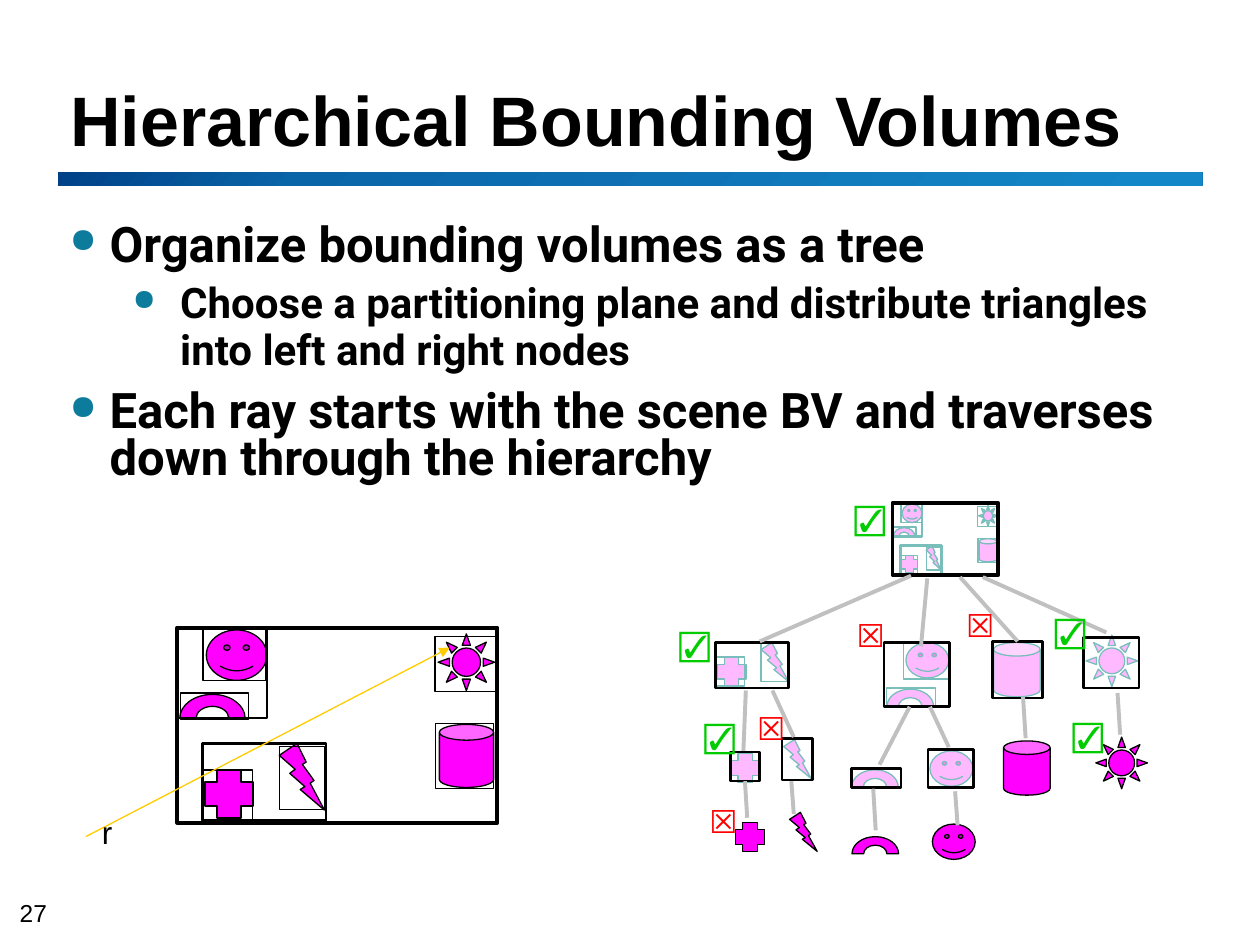
from dataclasses import dataclass
from typing import NamedTuple, Optional

from lxml import etree
from pptx import Presentation
from pptx.dml.color import RGBColor
from pptx.enum import shapes, text
from pptx.oxml import parse_xml
from pptx.oxml.ns import nsdecls, qn
from pptx.util import Pt


@dataclass(frozen=True)
class Theme:
    black: str = "000000"
    magenta: str = "FF00FF"
    teal: str = "7ABEBC"
    branch: str = "C0C0C0"
    ray: str = "FFCC00"
    bullet: str = "0C7B9C"
    hit: str = "00CC00"
    miss: str = "FF0000"
    bar: tuple = ((0, "004187"), (21, "0A64A8"), (96, "1487C8"))
    heading_font: str = "Arial"
    body_font: str = "Roboto"
    title: float = 40
    body: tuple = (28, 24)
    label: float = 18
    number: float = 14
    thin: float = 0.75
    medium: float = 1.5
    thick: float = 2.25


THEME = Theme()


class Area(NamedTuple):
    left: float
    top: float
    width: float
    height: float


class Style(NamedTuple):
    line: str
    opacity: int


class Symbol(NamedTuple):
    kind: str
    area: Area


class Box(NamedTuple):
    area: Area
    weight: float


class Branch(NamedTuple):
    start: tuple
    end: tuple
    start_box: Optional[str] = None  # joined at the bottom
    end_box: Optional[str] = None    # joined at the top


SOLID, FADED = Style(THEME.black, 100), Style(THEME.teal, 27)
PRESETS = {"smiley": shapes.MSO_SHAPE.SMILEY_FACE, "bolt": shapes.MSO_SHAPE.LIGHTNING_BOLT,
           "plus": shapes.MSO_SHAPE.CROSS, "sun": shapes.MSO_SHAPE.SUN,
           "can": shapes.MSO_SHAPE.CAN}

# Scene contents, measured from the corner of its frame
SCENE = Area(101.3, 358.6, 182.9, 111.6)
SCENE_SYMBOLS = [
    Symbol("smiley", Area(16.6, 1.4, 34.6, 28.8)), Symbol("bolt", Area(58.3, 66.2, 25.9, 38.2)),
    Symbol("arch", Area(1.4, 38.2, 37.4, 13.7)), Symbol("plus", Area(15.8, 81.4, 27.4, 27.4)),
    Symbol("sun", Area(149, 3.6, 32.4, 32.4)), Symbol("can", Area(149.8, 55.4, 31, 36))]
SCENE_BOXES = [
    Box(Area(14.4, 66.2, 70.6, 43.9), THEME.medium), Box(Area(-0.4, 0.7, 51.8, 51.1), THEME.medium),
    Box(Area(147.2, 5, 35.3, 31.7), THEME.thin), Box(Area(147.6, 54.7, 33.1, 37.4), THEME.thin),
    Box(Area(15.1, 81.4, 28.1, 28.8), THEME.thin), Box(Area(58.3, 68.1, 25.9, 36), THEME.thin),
    Box(Area(1.7, 37.4, 38.9, 15.1), THEME.thin), Box(Area(14.8, 0.7, 36, 29.5), THEME.thin)]

# Tree contents
ROOT = Area(510, 287.5, 60.5, 41)
TREE_SIZES = {"smiley": (24.5, 20.2), "bolt": (15.8, 22.3), "arch": (26.6, 9.8),
              "plus": (16.6, 16.6), "sun": (29.5, 29.5), "can": (26.6, 31)}
NODE_SYMBOLS = [("sun", 620.6, 362.9), ("can", 567.8, 367.2), ("bolt", 434.9, 367.2),
                ("plus", 409.7, 375.5), ("smiley", 517.7, 367.2), ("arch", 506.9, 393.8),
                ("arch", 486.7, 439.9), ("smiley", 531.4, 429.1), ("bolt", 447.8, 422.6),
                ("plus", 417.6, 430.6)]
LEAVES = [("can", 573.5, 423.4), ("sun", 626.2, 421.2), ("smiley", 532.8, 470.9),
          ("arch", 486.9, 478.1), ("plus", 420.3, 470), ("bolt", 451.2, 464.2)]
INNER_BOXES = [Area(409, 375.5, 16.6, 16.6), Area(434.9, 367.9, 15.1, 21.6),
               Area(506.6, 393.1, 28.1, 10.8), Area(516.2, 366.5, 25.9, 21.6)]
NODE_BOXES = {
    "sun": Area(619.2, 364.3, 31.7, 28.8), "can": Area(567.1, 366.5, 28.8, 32.4),
    "plus and bolt": Area(408.8, 367.2, 41.8, 25.9), "smiley and arch": Area(505.2, 367.2, 37.4, 36.7),
    "arch": Area(486.7, 439.2, 28.1, 10.8), "smiley": Area(530.4, 428.4, 25.9, 21.6),
    "bolt": Area(446.9, 421.9, 17.3, 23.8), "plus": Area(417.4, 429.8, 16.6, 16.6)}
BRANCHES = [
    Branch((520.6, 329), (434.2, 366.5)), Branch((529.9, 330.5), (526.3, 369.4)),
    Branch((548.6, 329.8), (581, 366.5), end_box="can"), Branch((561.6, 329.8), (632.2, 361.4)),
    Branch((531.4, 403.9), (542.2, 427)), Branch((519.8, 403.9), (502.6, 437)),
    Branch((426.2, 394.6), (424.8, 429.1)), Branch((441.4, 394.6), (453.6, 421.2)),
    Branch((584.6, 398.2), (586.1, 421.9)), Branch((638.6, 396), (640.1, 419.8)),
    Branch((452.2, 446.4), (453.6, 465.1)), Branch((425.5, 447.8), (427, 467.3), start_box="plus"),
    Branch((545.8, 452.2), (547.2, 471.6)), Branch((499, 450.7), (500.4, 474.5))]
MARKS = {("☑", THEME.hit): [(481, 281.5), (380.9, 353.5), (395.1, 406.1), (595.4, 346.3), (605.5, 405.4)],
         ("☒", THEME.miss): [(482.4, 348.5), (425.5, 401.8), (398.2, 455), (545, 342.7)]}
BODY = [(0, "Organize bounding volumes as a tree"),
        (1, "Choose a partitioning plane and distribute triangles into left and right nodes"),
        (0, "Each ray starts with the scene BV and traverses down through the hierarchy")]


def points(area: Area) -> list:
    return [Pt(value) for value in area]


def set_line(shape, color: str, weight: float) -> None:
    shape.line.color.rgb = RGBColor.from_string(color)
    shape.line.width = Pt(weight)


def draw_box(slide, area: Area, color: str, weight: float):
    shape = slide.shapes.add_shape(shapes.MSO_SHAPE.RECTANGLE, *points(area))
    shape.shadow.inherit = False
    shape.fill.background()
    set_line(shape, color, weight)
    return shape


def draw_arch(slide, area: Area):
    left, top, width, height = points(area)
    center, base = left + width // 2, top + height
    outline = [(center + side * width // 4, base - rise * height // 2) for side, rise in
               ((-1, 0), (0, 1), (1, 0), (2, 0), (0, 2), (-2, 0))]
    builder = slide.shapes.build_freeform(*outline[0])
    builder.add_line_segments(outline[1:], close=True)
    shape = builder.convert_to_shape()
    outline_path = shape._element.spPr.find(".//" + qn("a:path"))
    corners = [(int(point.get("x")), int(point.get("y"))) for point in outline_path.iter(qn("a:pt"))]
    # Round each quarter between a foot and a crown
    for index, step in enumerate(outline_path.findall(qn("a:lnTo")), 1):
        start, end = corners[index - 1], corners[index]
        if start[1] == end[1]:
            continue
        foot, crown = (start, end) if start[1] > end[1] else (end, start)
        controls = [[round(a + 0.5523 * (b - a)) for a, b in zip(point, (foot[0], crown[1]))]
                    for point in (start, end)]
        step.tag = qn("a:cubicBezTo")
        for position, (x, y) in enumerate(controls):
            point = etree.Element(qn("a:pt"), x=str(x), y=str(y))
            step.insert(position, point)
    # The frame holds the whole ellipse, of which the arch is the upper half
    outline_path.set("h", str(2 * int(outline_path.get("h"))))
    shape.height = 2 * shape.height
    return shape


def draw_symbol(slide, symbol: Symbol, style: Style) -> None:
    if symbol.kind == "arch":
        shape = draw_arch(slide, symbol.area)
    else:
        shape = slide.shapes.add_shape(PRESETS[symbol.kind], *points(symbol.area))
    if symbol.kind == "can":
        shape.adjustments[0] = 0.29
    shape.shadow.inherit = False
    shape.fill.solid()
    shape.fill.fore_color.rgb = RGBColor.from_string(THEME.magenta)
    if style.opacity < 100:
        color = shape.fill._xPr.find(qn("a:solidFill"))[0]
        etree.SubElement(color, qn("a:alpha")).set("val", str(style.opacity * 1000))
    set_line(shape, style.line, THEME.thin)


def draw_scene(slide, frame: Area, style: Style) -> None:
    across, down = frame.width / SCENE.width, frame.height / SCENE.height

    def place(area: Area) -> Area:
        return Area(frame.left + area.left * across, frame.top + area.top * down,
                    area.width * across, area.height * down)

    for symbol in SCENE_SYMBOLS:
        draw_symbol(slide, symbol._replace(area=place(symbol.area)), style)
    for box in SCENE_BOXES:
        draw_box(slide, place(box.area), style.line, box.weight)
    draw_box(slide, frame, THEME.black, THEME.thick)


def draw_line(slide, start: tuple, end: tuple, color: str, weight: float):
    line = slide.shapes.add_connector(shapes.MSO_CONNECTOR.STRAIGHT, *map(Pt, start + end))
    set_line(line, color, weight)
    etree.SubElement(line._element.spPr, qn("a:effectLst"))
    return line


def add_run(paragraph, words: str, size: float, font: str, color: str, bold: bool = False) -> None:
    run = paragraph.add_run()
    run.text = words
    run.font.size, run.font.name, run.font.bold = Pt(size), font, bold
    run.font.color.rgb = RGBColor.from_string(color)


def add_text_frame(slide, area: Area, wrap: bool = True):
    frame = slide.shapes.add_textbox(*points(area)).text_frame
    frame.word_wrap = wrap
    return frame


def draw_label(slide, area: Area, words: str, color: str) -> None:
    frame = add_text_frame(slide, area, wrap=False)
    add_run(frame.paragraphs[0], words, THEME.label, THEME.heading_font, color)


def draw_header(slide) -> None:
    bar = draw_box(slide, Area(33.1, 98.3, 653.8, 7.9), THEME.black, THEME.thin)
    bar.line.fill.background()
    stops = "".join(f'<a:gs pos="{stop * 1000}"><a:srgbClr val="{color}"/></a:gs>'
                    for stop, color in THEME.bar)
    properties = bar._element.spPr
    properties.replace(properties.find(qn("a:noFill")), parse_xml(
        f'<a:gradFill {nsdecls("a")}><a:gsLst>{stops}</a:gsLst><a:lin ang="2700000"/></a:gradFill>'))
    frame = add_text_frame(slide, Area(33.1, 23.8, 652.3, 71.3))
    frame.vertical_anchor = text.MSO_ANCHOR.BOTTOM
    frame.paragraphs[0].line_spacing = Pt(36)
    add_run(frame.paragraphs[0], "Hierarchical Bounding Volumes", THEME.title,
            THEME.heading_font, THEME.black, bold=True)


def draw_body(slide) -> None:
    frame = add_text_frame(slide, Area(32.8, 125, 655.2, 398.9))
    for index, (level, words) in enumerate(BODY):
        paragraph = frame.add_paragraph() if index else frame.paragraphs[0]
        properties = paragraph._p.get_or_add_pPr()
        margin, indent = ((22.8, -22.8), (63.1, -27.1))[level]
        properties.set("marL", str(Pt(margin)))
        properties.set("indent", str(Pt(indent)))
        color = etree.SubElement(properties, qn("a:buClr"))
        etree.SubElement(color, qn("a:srgbClr")).set("val", THEME.bullet)
        etree.SubElement(properties, qn("a:buSzPct")).set("val", "70000")
        etree.SubElement(properties, qn("a:buChar")).set("char", "●")
        paragraph.level = level
        paragraph.line_spacing, paragraph.space_after = Pt(27), Pt(4)
        paragraph.space_before = Pt(6 if index and level == 0 else 0)
        add_run(paragraph, words, THEME.body[level], THEME.body_font, THEME.black, bold=True)


def draw_tree(slide) -> None:
    draw_scene(slide, ROOT, FADED)
    for style, symbols in ((FADED, NODE_SYMBOLS), (SOLID, LEAVES)):
        for kind, left, top in symbols:
            draw_symbol(slide, Symbol(kind, Area(left, top, *TREE_SIZES[kind])), style)
    for area in INNER_BOXES:
        draw_box(slide, area, THEME.teal, THEME.thin)
    nodes = {name: draw_box(slide, area, THEME.black, THEME.medium) for name, area in NODE_BOXES.items()}
    for branch in BRANCHES:
        line = draw_line(slide, branch.start, branch.end, THEME.branch, THEME.thick)
        if branch.start_box:
            line.begin_connect(nodes[branch.start_box], 2)
        if branch.end_box:
            line.end_connect(nodes[branch.end_box], 0)
    for (mark, color), places in MARKS.items():
        for left, top in places:
            draw_label(slide, Area(left, top, 30.2, 28.8), mark, color)


def main() -> None:
    presentation = Presentation()
    presentation.slide_width, presentation.slide_height = Pt(720), Pt(540)
    slide = presentation.slides.add_slide(presentation.slide_layouts[6])
    draw_header(slide)
    draw_body(slide)
    # Scene with its ray
    draw_scene(slide, SCENE, SOLID)
    ray = draw_line(slide, (49, 478.1), (257, 370.1), THEME.ray, THEME.thin)
    etree.SubElement(ray.line._get_or_add_ln(), qn("a:tailEnd")).set("type", "triangle")
    draw_label(slide, Area(51.1, 460.8, 20.2, 28.8), "r", THEME.black)
    draw_tree(slide)
    # Slide number
    number = add_text_frame(slide, Area(11.3, 513.4, 24.5, 16.6), wrap=False)
    number.margin_left = number.margin_right = number.margin_top = number.margin_bottom = 0
    number.vertical_anchor = text.MSO_ANCHOR.BOTTOM
    add_run(number.paragraphs[0], "27", THEME.number, THEME.heading_font, THEME.black)
    presentation.save("out.pptx")


if __name__ == "__main__":
    main()
